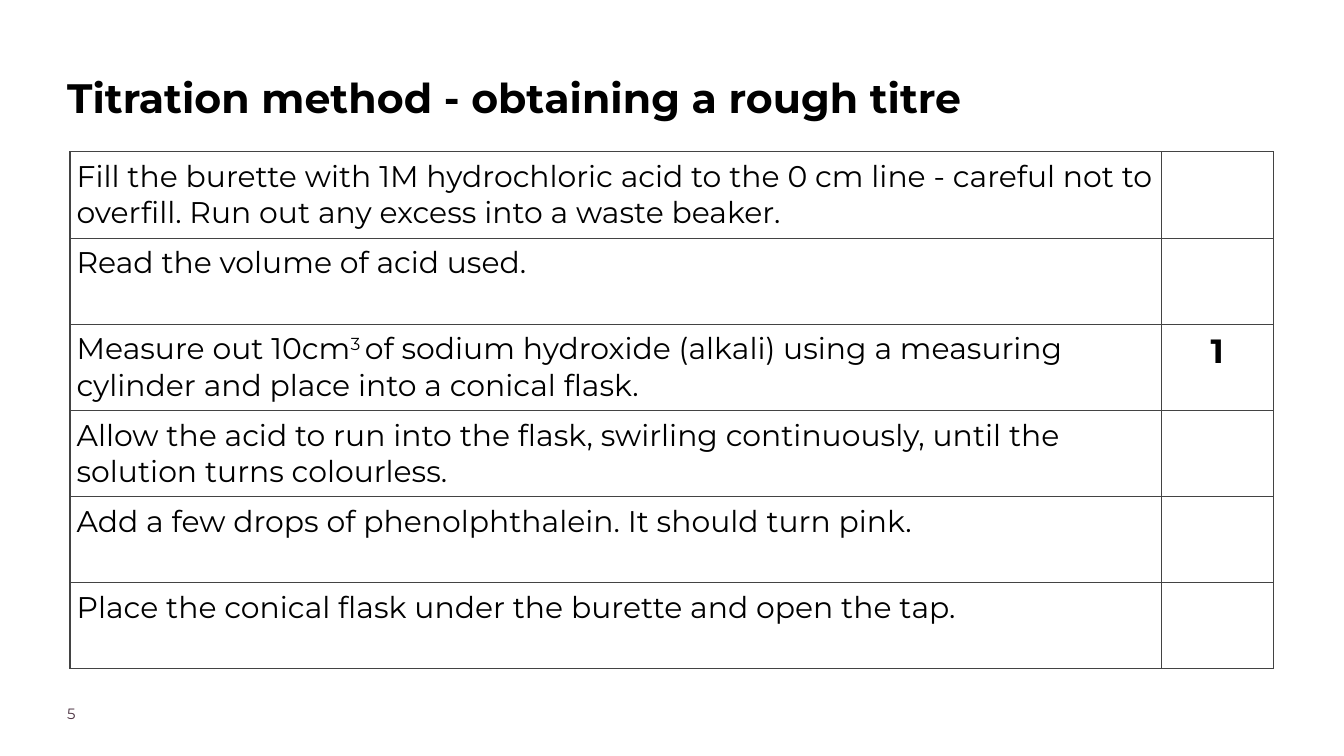
from dataclasses import dataclass

from lxml.etree import SubElement
from pptx import Presentation
from pptx.dml.color import RGBColor
from pptx.enum.text import PP_ALIGN
from pptx.oxml.ns import qn
from pptx.slide import Slide
from pptx.table import _Cell as Cell
from pptx.text.text import TextFrame
from pptx.util import Pt

EMU_PER_PX = 9144  # 100 px to the inch
FONT = "Montserrat"
COLORS = {"text": "000000", "border": "434343", "number": "4B3241"}
COLUMN_WIDTHS = (1624, 167)
ROW_HEIGHT = 128
CELL_MARGIN = 10
BORDER_WIDTH = 1.5


@dataclass(frozen=True)
class Step:
    """One row of the method; text between ^ marks is superscript."""
    text: str
    order: str = ""


STEPS = (
    Step("Fill the burette with 1M hydrochloric acid to the 0 cm line - careful "
         "not to overfill. Run out any excess into a waste beaker."),
    Step("Read the volume of acid used."),
    Step("Measure out 10cm^3 ^of sodium hydroxide (alkali) using a measuring "
         "cylinder and place into a conical flask.", "1"),
    Step("Allow the acid to run into the flask, swirling continuously, until the "
         "solution turns colourless."),
    Step("Add a few drops of phenolphthalein. It should turn pink."),
    Step("Place the conical flask under the burette and open the tap."),
)


def px(value: int) -> int:
    return value * EMU_PER_PX


def write_text(frame: TextFrame, text: str, *, size: int, color: str = "text",
               bold: bool = False, align: PP_ALIGN = PP_ALIGN.LEFT,
               line_spacing: float = 1.0, margin: int = 0) -> None:
    frame.word_wrap = True
    frame.margin_left = frame.margin_right = px(margin)
    frame.margin_top = frame.margin_bottom = px(margin)
    paragraph = frame.paragraphs[0]
    paragraph.alignment = align
    paragraph.line_spacing = line_spacing
    for index, part in enumerate(text.split("^")):
        run = paragraph.add_run()
        run.text = part
        run.font.name = FONT
        run.font.size = Pt(size)
        run.font.bold = bold
        run.font.color.rgb = RGBColor.from_string(COLORS[color])
        if index % 2:
            run._r.get_or_add_rPr().set("baseline", "30000")


def add_text(slide: Slide, left: int, top: int, width: int, height: int,
             text: str, **text_format) -> None:
    shape = slide.shapes.add_textbox(px(left), px(top), px(width), px(height))
    write_text(shape.text_frame, text, **text_format)


def style_cell(cell: Cell) -> None:
    cell.margin_left = cell.margin_right = px(CELL_MARGIN)
    cell.margin_top = cell.margin_bottom = px(CELL_MARGIN)
    properties = cell._tc.get_or_add_tcPr()
    for side in ("a:lnL", "a:lnR", "a:lnT", "a:lnB"):
        line = SubElement(properties, qn(side), w=str(Pt(BORDER_WIDTH)))
        fill = SubElement(line, qn("a:solidFill"))
        SubElement(fill, qn("a:srgbClr"), val=COLORS["border"])
    cell.fill.background()


def add_steps_table(slide: Slide, left: int, top: int) -> None:
    frame = slide.shapes.add_table(
        len(STEPS), len(COLUMN_WIDTHS), px(left), px(top),
        px(sum(COLUMN_WIDTHS)), px(ROW_HEIGHT * len(STEPS)))
    table = frame.table
    table.first_row = table.horz_banding = False
    for column, width in zip(table.columns, COLUMN_WIDTHS):
        column.width = px(width)
    for row, step in zip(table.rows, STEPS):
        row.height = px(ROW_HEIGHT)
        step_cell, order_cell = row.cells
        style_cell(step_cell)
        style_cell(order_cell)
        write_text(step_cell.text_frame, step.text, size=32, margin=CELL_MARGIN)
        if step.order:
            write_text(order_cell.text_frame, step.order, size=36, bold=True,
                       align=PP_ALIGN.CENTER, margin=CELL_MARGIN)


def main() -> None:
    presentation = Presentation()
    presentation.slide_width = px(2000)
    presentation.slide_height = px(1125)
    slide = presentation.slides.add_slide(presentation.slide_layouts[6])

    # Method steps with their order column
    add_steps_table(slide, 104, 226)

    # Title
    add_text(slide, 100, 97, 1444, 178, "Titration method - obtaining a rough titre",
             size=44, bold=True, line_spacing=1.15)

    # Slide number
    add_text(slide, 100, 1048, 157, 39, "5", size=16, color="number")

    presentation.save("out.pptx")


if __name__ == "__main__":
    main()
